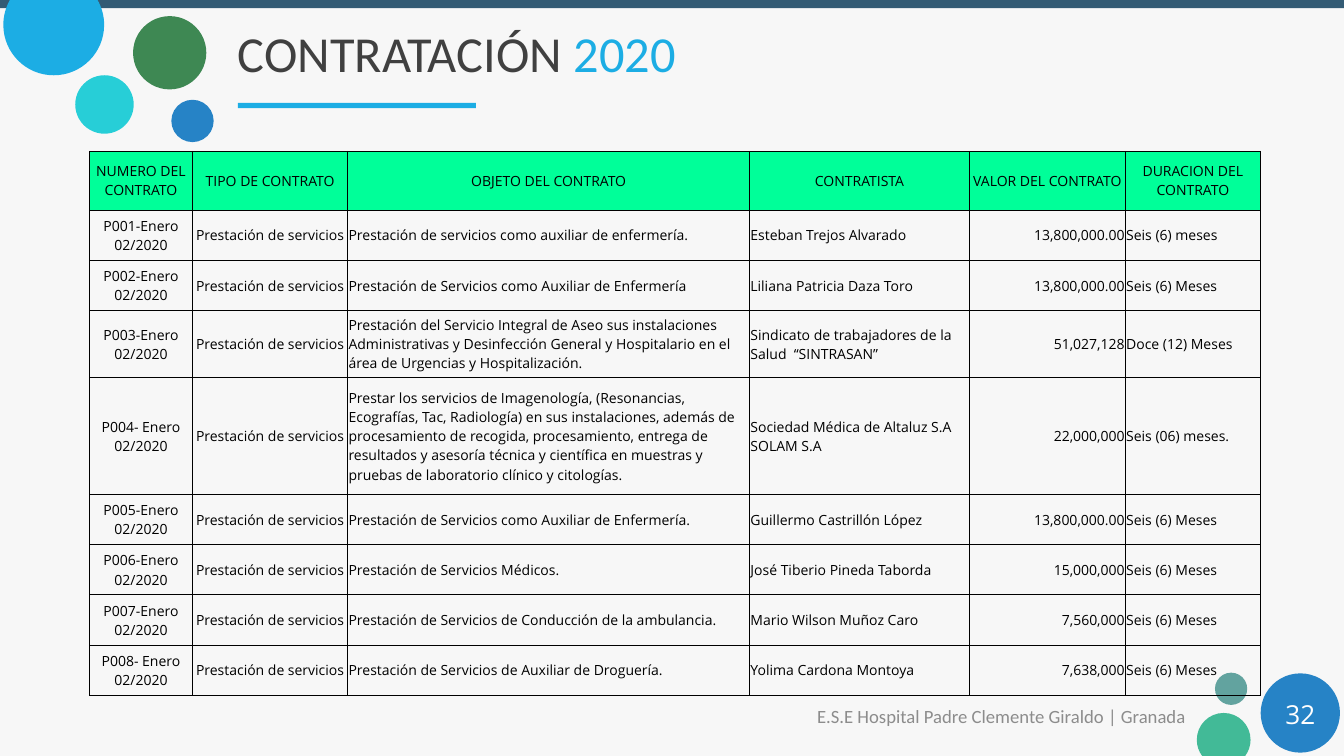
import math
from dataclasses import dataclass
from typing import Any, NamedTuple, Optional

import pptx
import pptx.dml.color
import pptx.enum.shapes
import pptx.enum.text
import pptx.oxml
import pptx.oxml.ns
import pptx.util

Pt = pptx.util.Pt
ALIGN = pptx.enum.text.PP_ALIGN
MIDDLE = pptx.enum.text.MSO_ANCHOR.MIDDLE
SHAPE = pptx.enum.shapes.MSO_SHAPE
NAMESPACE = pptx.oxml.ns.nsdecls("a")

SLIDE_WIDTH, SLIDE_HEIGHT = 1440, 810
SKY, BLUE, BLACK = "1CADE4", "2683C6", "000000"


@dataclass
class Disc:
    center_x: float
    center_y: float
    radius: float
    color: str
    edge: Optional[float] = None  # height of the slide edge that cuts the disc


class Span(NamedTuple):
    text: str
    color: str


@dataclass
class Label:
    left: float
    top: float
    width: float
    height: float
    spans: list[Span]
    font: str
    size: float
    align: Any


class Contract(NamedTuple):
    number: str
    purpose: str
    contractor: str
    value: str
    duration: str = "Seis (6) Meses"
    kind: str = "Prestación de servicios"


class Column(NamedTuple):
    heading: str
    field: str
    width: float
    align: Any


DISCS = [
    Disc(206.28, 129.6, 22.68, BLUE),
    Disc(57.6, 26.64, 54, SKY, edge=0),
    Disc(111.96, 111.96, 31.32, "27CED7"),
    Disc(181.8, 56.52, 39.24, "3E8853"),
    Disc(1319.04, 738, 17.28, "62A39F"),
    Disc(1393.2, 763.92, 42.48, BLUE),
    Disc(1311.12, 792.72, 28.8, "42BA97", edge=SLIDE_HEIGHT),
]

LABELS = [
    Label(827.6, 745.2, 455.76, 43.2,
          [Span("E.S.E Hospital Padre Clemente Giraldo | Granada", "8C8C8C")],
          "Calibri", 20, ALIGN.RIGHT),
    Label(1350.72, 743.3, 84.96, 43.2, [Span("32", "FFFFFF")], "Open Sans", 28, ALIGN.CENTER),
    Label(241.92, 19.44, 1129.68, 72.72,
          [Span("CONTRATACIÓN ", "404040"), Span("2020", SKY)], "Calibri", 54, ALIGN.LEFT),
]

COLUMNS = [
    Column("NUMERO DEL CONTRATO", "number", 110.2, ALIGN.CENTER),
    Column("TIPO DE CONTRATO", "kind", 166.5, ALIGN.CENTER),
    Column("OBJETO DEL CONTRATO", "purpose", 430.6, ALIGN.LEFT),
    Column("CONTRATISTA", "contractor", 235.4, ALIGN.LEFT),
    Column("VALOR DEL CONTRATO", "value", 167.2, ALIGN.RIGHT),
    Column("DURACION DEL CONTRATO", "duration", 144.7, ALIGN.LEFT),
]

CONTRACTS = [
    Contract("P001-Enero 02/2020", "Prestación de servicios como auxiliar de enfermería.",
             "Esteban Trejos Alvarado", "13,800,000.00", "Seis (6) meses"),
    Contract("P002-Enero 02/2020", "Prestación de Servicios como Auxiliar de Enfermería",
             "Liliana Patricia Daza Toro", "13,800,000.00"),
    Contract("P003-Enero 02/2020",
             "Prestación del Servicio Integral de Aseo sus instalaciones Administrativas y "
             "Desinfección General y Hospitalario en el área de Urgencias y Hospitalización.",
             "Sindicato de trabajadores de la Salud  “SINTRASAN”", "51,027,128", "Doce (12) Meses"),
    Contract("P004- Enero 02/2020",
             "Prestar los servicios de Imagenología, (Resonancias, Ecografías, Tac, Radiología) "
             "en sus instalaciones, además de procesamiento de recogida, procesamiento, entrega "
             "de resultados y asesoría técnica y científica en muestras y pruebas de laboratorio "
             "clínico y citologías.",
             "Sociedad Médica de Altaluz S.A SOLAM S.A", "22,000,000", "Seis (06) meses."),
    Contract("P005-Enero 02/2020", "Prestación de Servicios como Auxiliar de Enfermería.",
             "Guillermo Castrillón López", "13,800,000.00"),
    Contract("P006-Enero 02/2020", "Prestación de Servicios Médicos.",
             "José Tiberio Pineda Taborda", "15,000,000"),
    Contract("P007-Enero 02/2020", "Prestación de Servicios de Conducción de la ambulancia.",
             "Mario Wilson Muñoz Caro", "7,560,000"),
    Contract("P008- Enero 02/2020", "Prestación de Servicios de Auxiliar de Droguería.",
             "Yolima Cardona Montoya", "7,638,000"),
]
HEADER_HEIGHT, ROW_HEIGHT = 63, 53.8
TALL_ROWS = {3: 72, 4: 125.2}
CELL_FORMAT = {"vertical_anchor": MIDDLE, "margin_left": Pt(0.8), "margin_top": Pt(0.8),
               "margin_right": Pt(0.8), "margin_bottom": Pt(0)}
BOX_FORMAT = {"word_wrap": True, "vertical_anchor": MIDDLE, "margin_left": Pt(13),
              "margin_top": Pt(6.5), "margin_right": Pt(13), "margin_bottom": Pt(6.5)}


def rgb(color: str) -> pptx.dml.color.RGBColor:
    return pptx.dml.color.RGBColor.from_string(color)


def set_format(target: Any, values: dict[str, Any]) -> None:
    for name, value in values.items():
        setattr(target, name, value)


def paint(shape: Any, color: str) -> None:
    shape.shadow.inherit = False
    shape.fill.solid()
    shape.fill.fore_color.rgb = rgb(color)
    shape.line.fill.background()


def draw_bar(page: Any, left: float, top: float, width: float, height: float, color: str) -> None:
    paint(page.shapes.add_shape(SHAPE.RECTANGLE, Pt(left), Pt(top), Pt(width), Pt(height)), color)


def build_cut_disc(page: Any, disc: Disc) -> Any:
    """Outline the visible part of a disc with one curve per quadrant."""
    def point(angle: float, slope: float = 0) -> tuple[int, int]:
        return (Pt(disc.center_x + disc.radius * (math.cos(angle) - slope * math.sin(angle))),
                Pt(disc.center_y + disc.radius * (math.sin(angle) + slope * math.cos(angle))))

    start = math.asin((disc.edge - disc.center_y) / disc.radius)
    turn = math.pi if disc.edge < disc.center_y else -math.pi
    angles = [start, 0, turn / 2, turn, turn - start]
    builder = page.shapes.build_freeform(*point(start))
    builder.add_line_segments([point(angle) for angle in angles[1:]], close=True)
    shape = builder.convert_to_shape()
    lines = shape._element.findall(".//" + pptx.oxml.ns.qn("a:lnTo"))
    for line, first, last in zip(lines, angles, angles[1:]):
        slope = 4 / 3 * math.tan((last - first) / 4)
        nodes = [point(first, slope), point(last, -slope), point(last)]
        marks = "".join(f'<a:pt x="{x - shape.left}" y="{y - shape.top}"/>' for x, y in nodes)
        curve = pptx.oxml.parse_xml(f"<a:cubicBezTo {NAMESPACE}>{marks}</a:cubicBezTo>")
        line.getparent().replace(line, curve)
    return shape


def draw_disc(page: Any, disc: Disc) -> None:
    if disc.edge is None:
        size = Pt(2 * disc.radius)
        shape = page.shapes.add_shape(SHAPE.OVAL, Pt(disc.center_x - disc.radius),
                                      Pt(disc.center_y - disc.radius), size, size)
    else:
        shape = build_cut_disc(page, disc)
    paint(shape, disc.color)


def write(para: Any, spans: list[Span], font: str, size: float, align: Any) -> None:
    para.alignment = align
    for text, color in spans:
        span = para.add_run()
        span.text = text
        set_format(span.font, {"name": font, "size": Pt(size)})
        span.font.color.rgb = rgb(color)


def draw_label(page: Any, label: Label) -> None:
    box = page.shapes.add_textbox(Pt(label.left), Pt(label.top), Pt(label.width), Pt(label.height))
    set_format(box.text_frame, BOX_FORMAT)
    write(box.text_frame.paragraphs[0], label.spans, label.font, label.size, label.align)


def add_borders(cell: Any, color: str) -> None:
    properties = cell._tc.get_or_add_tcPr()
    for index, side in enumerate("LRTB"):
        properties.insert(index, pptx.oxml.parse_xml(
            f'<a:ln{side} {NAMESPACE} w="{Pt(1)}"><a:solidFill>'
            f'<a:srgbClr val="{color}"/></a:solidFill></a:ln{side}>'))


def fill_cell(cell: Any, text: str, align: Any, color: Optional[str] = None) -> None:
    set_format(cell, CELL_FORMAT)
    if color:
        cell.fill.solid()
        cell.fill.fore_color.rgb = rgb(color)
    else:
        cell.fill.background()
    add_borders(cell, BLACK)
    write(cell.text_frame.paragraphs[0], [Span(text, BLACK)], "Open Sans", 15, align)


def draw_contracts(page: Any, left: float, top: float) -> None:
    heights = [HEADER_HEIGHT] + [TALL_ROWS.get(row, ROW_HEIGHT)
                                 for row in range(1, len(CONTRACTS) + 1)]
    width = sum(column.width for column in COLUMNS)
    table = page.shapes.add_table(len(heights), len(COLUMNS), Pt(left), Pt(top),
                                  Pt(width), Pt(sum(heights))).table
    set_format(table, {"first_row": False, "horz_banding": False})
    for row, height in zip(table.rows, heights):
        row.height = Pt(height)
    for index, column in enumerate(COLUMNS):
        table.columns[index].width = Pt(column.width)
        fill_cell(table.cell(0, index), column.heading, ALIGN.CENTER, "00FF99")
        for row, contract in enumerate(CONTRACTS, start=1):
            fill_cell(table.cell(row, index), getattr(contract, column.field), column.align)


def main() -> None:
    deck = pptx.Presentation()
    set_format(deck, {"slide_width": Pt(SLIDE_WIDTH), "slide_height": Pt(SLIDE_HEIGHT)})
    page = deck.slides.add_slide(deck.slide_layouts[6])
    page.background.fill.solid()
    page.background.fill.fore_color.rgb = rgb("F7F7F7")
    # Decoration: top band, discs and title underline
    draw_bar(page, 0, 0, SLIDE_WIDTH, 8.64, "335B74")
    for disc in DISCS:
        draw_disc(page, disc)
    draw_bar(page, 255, 110.16, 255, 5.76, SKY)
    # Footer, page number and title
    for label in LABELS:
        draw_label(page, label)
    # Contract table
    draw_contracts(page, 96, 162)
    deck.save("out.pptx")


if __name__ == "__main__":
    main()
